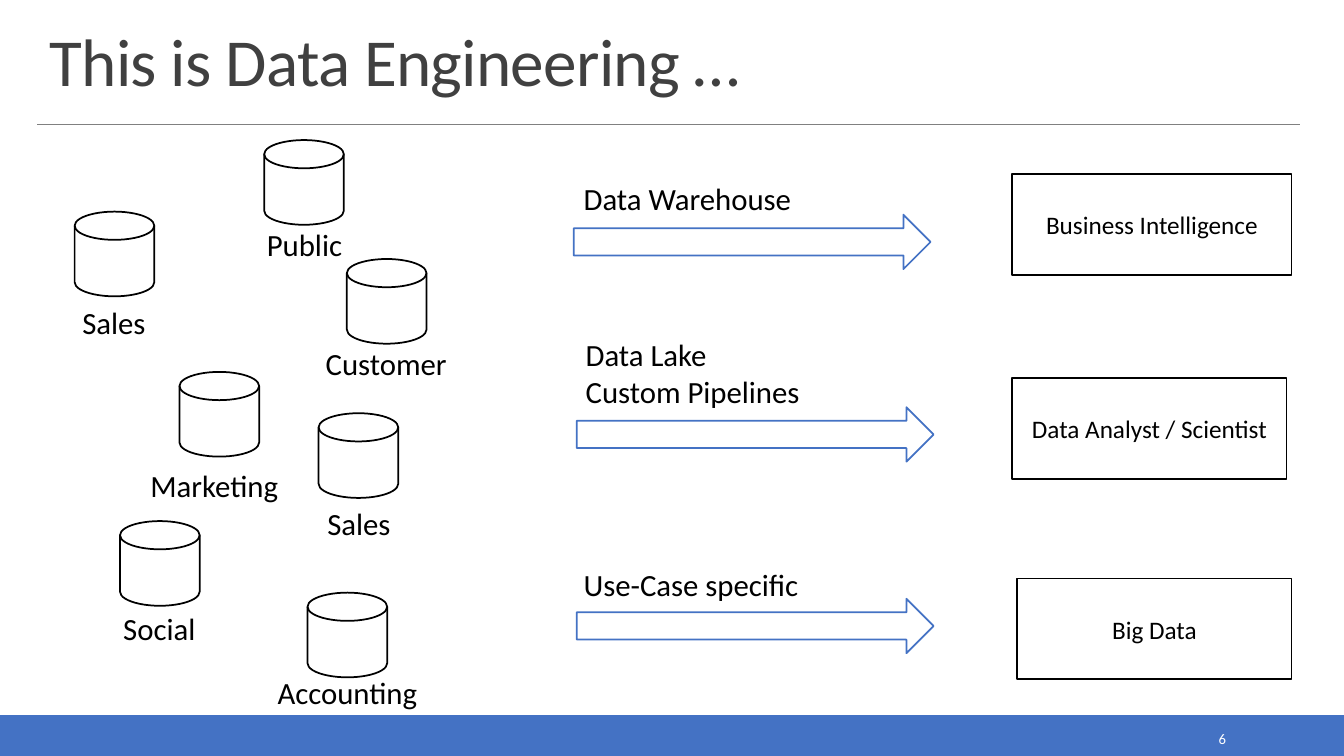
from dataclasses import dataclass

from lxml import etree
from pptx import Presentation
from pptx.dml.color import RGBColor
from pptx.enum.shapes import MSO_CONNECTOR, MSO_SHAPE
from pptx.enum.text import MSO_ANCHOR as Anchor, MSO_AUTO_SIZE as AutoSize, PP_ALIGN as Align
from pptx.oxml.ns import qn
from pptx.util import Inches, Pt

BLUE = RGBColor(0x44, 0x72, 0xC4)
BLACK = RGBColor(0, 0, 0)
WHITE = RGBColor(0xFF, 0xFF, 0xFF)
TITLE_GRAY = RGBColor(0x40, 0x40, 0x40)
RULE_GRAY = RGBColor(0x80, 0x80, 0x80)
FONT = "Calibri"

LABEL_HEIGHT = 0.47
DISK_SIZE = (0.79, 0.84)
ARROW_SIZE = (3.54, 0.54)


@dataclass
class Source:
    name: str
    disk: tuple[float, float]
    label: tuple[float, float]
    label_width: float


@dataclass
class Pipeline:
    label: str
    label_at: tuple[float, float]
    label_height: float
    arrow_at: tuple[float, float]
    consumer: str
    box: tuple[float, float, float, float]


SOURCES = [
    Source("Public", (2.62, 1.39), (2.28, 2.19), 1.48),
    Source("Sales", (0.74, 2.1), (0.54, 2.96), 1.18),
    Source("Customer", (3.44, 2.57), (3.09, 3.37), 1.48),
    Source("Marketing", (1.78, 3.69), (1.33, 4.58), 1.59),
    Source("Sales", (3.16, 4.1), (2.97, 4.96), 1.18),
    Source("Social", (1.19, 5.17), (0.84, 6), 1.48),
    Source("Accounting", (3.05, 5.88), (2.65, 6.63), 1.59),
]
PIPELINES = [
    Pipeline("Data Warehouse", (5.69, 1.73), LABEL_HEIGHT, (5.69, 2.13),
             "Business Intelligence", (10.04, 1.73, 2.77, 1)),
    Pipeline("Data Lake\nCustom Pipelines", (5.71, 3.28), 0.84, (5.72, 4.04),
             "Data Analyst / Scientist", (10.04, 3.75, 2.72, 1)),
    Pipeline("Use-Case specific", (5.69, 5.56), LABEL_HEIGHT, (5.72, 5.94),
             "Big Data", (10.09, 5.74, 2.72, 1)),
]


def write_text(shape, text: str, *, size: float = 22, color: RGBColor = BLACK,
               align: Align = Align.LEFT, anchor: Anchor = Anchor.TOP,
               auto_size: AutoSize = AutoSize.NONE) -> None:
    frame = shape.text_frame
    frame.word_wrap = True
    frame.auto_size = auto_size
    frame.vertical_anchor = anchor
    paragraph = frame.paragraphs[0]
    paragraph.text = text
    paragraph.alignment = align
    for run in paragraph.runs:
        run.font.name = FONT
        run.font.size = Pt(size)
        run.font.color.rgb = color


def add_label(slide, text: str, left: float, top: float, width: float,
              height: float = LABEL_HEIGHT, **text_format) -> None:
    box = slide.shapes.add_textbox(*map(Inches, (left, top, width, height)))
    write_text(box, text, **text_format)


def add_outline(slide, kind: MSO_SHAPE, bounds: tuple, line: RGBColor = BLACK,
                fill: RGBColor | None = None):
    shape = slide.shapes.add_shape(kind, *map(Inches, bounds))
    shape.shadow.inherit = False
    if fill is None:
        shape.fill.background()
    else:
        shape.fill.solid()
        shape.fill.fore_color.rgb = fill
    shape.line.color.rgb = line
    shape.line.width = Pt(1.25)
    return shape


def add_frame(slide) -> None:
    # Footer bar and slide number
    add_outline(slide, MSO_SHAPE.RECTANGLE, (0, 7.1, 13.33, 0.4), BLUE, BLUE)
    add_label(slide, "6", 10.83, 7.19, 1.43, 0.28, size=10.5, color=WHITE,
              align=Align.RIGHT, anchor=Anchor.MIDDLE)

    # Rule below the title
    rule = slide.shapes.add_connector(
        MSO_CONNECTOR.STRAIGHT, *map(Inches, (0.37, 1.23, 12.89, 1.23)))
    rule.line.color.rgb = RULE_GRAY
    rule.line.width = Pt(0.5)
    etree.SubElement(rule._element.spPr, qn("a:effectLst"))

    # Title
    title = slide.shapes.title
    title.left, title.top, title.width, title.height = map(Inches, (0.39, 0.2, 12.52, 0.84))
    write_text(title, "This is Data Engineering …", size=48, color=TITLE_GRAY,
               anchor=Anchor.BOTTOM)
    paragraph = title.text_frame.paragraphs[0]
    paragraph.line_spacing = 0.85
    paragraph.runs[0]._r.get_or_add_rPr().set("spc", "-50")


def add_source(slide, source: Source) -> None:
    add_outline(slide, MSO_SHAPE.FLOWCHART_MAGNETIC_DISK, source.disk + DISK_SIZE)
    add_label(slide, source.name, *source.label, source.label_width,
              align=Align.CENTER, auto_size=AutoSize.SHAPE_TO_FIT_TEXT)


def add_pipeline(slide, pipeline: Pipeline) -> None:
    add_outline(slide, MSO_SHAPE.RIGHT_ARROW, pipeline.arrow_at + ARROW_SIZE, BLUE)
    add_label(slide, pipeline.label, *pipeline.label_at, 3.02, pipeline.label_height,
              auto_size=AutoSize.SHAPE_TO_FIT_TEXT)
    box = add_outline(slide, MSO_SHAPE.RECTANGLE, pipeline.box, fill=WHITE)
    write_text(box, pipeline.consumer, size=18, align=Align.CENTER, anchor=Anchor.MIDDLE)


def main() -> None:
    presentation = Presentation()
    presentation.slide_width = Inches(13.33)
    presentation.slide_height = Inches(7.5)
    slide = presentation.slides.add_slide(presentation.slide_layouts.get_by_name("Title Only"))
    add_frame(slide)
    for pipeline in PIPELINES:
        add_pipeline(slide, pipeline)
    for source in SOURCES:
        add_source(slide, source)
    presentation.save("out.pptx")


if __name__ == "__main__":
    main()
